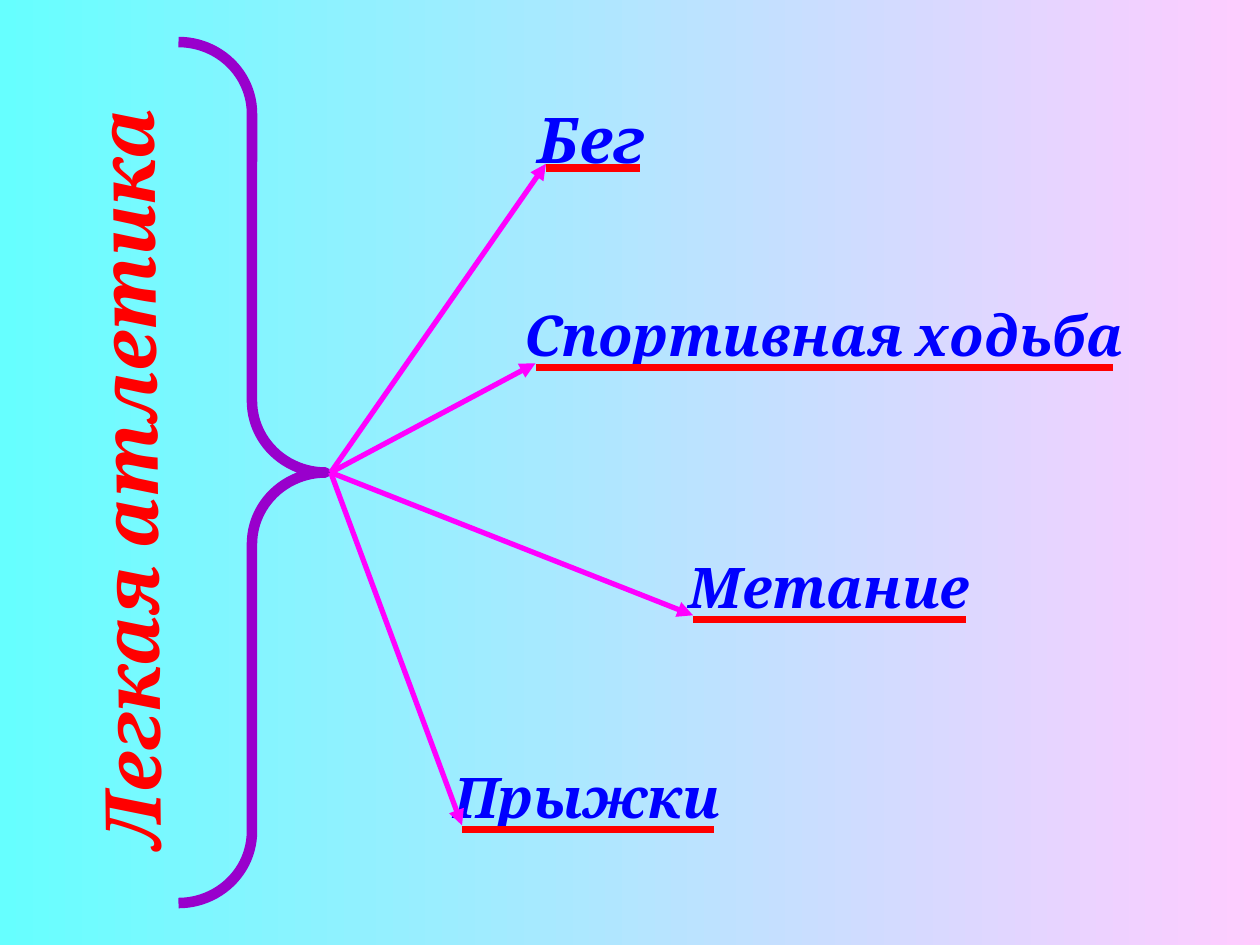
from dataclasses import dataclass

from lxml import etree
from pptx import Presentation
from pptx.dml.color import RGBColor
from pptx.enum.shapes import MSO_CONNECTOR, MSO_SHAPE
from pptx.enum.text import MSO_AUTO_SIZE, PP_ALIGN
from pptx.oxml.ns import qn
from pptx.util import Inches, Pt

STRAIGHT = MSO_CONNECTOR.STRAIGHT
RIGHT_BRACE = MSO_SHAPE.RIGHT_BRACE
GROW = MSO_AUTO_SIZE.SHAPE_TO_FIT_TEXT
LEFT, CENTER = PP_ALIGN.LEFT, PP_ALIGN.CENTER

CELL = Inches(1) / 12
COLUMNS, ROWS = 120, 90


@dataclass(frozen=True)
class Theme:
    font: str = "Cambria"
    bg_left: str = "66FFFF"
    bg_right: str = "FFCCFF"
    title: str = "FF0000"
    branch: str = "0000FF"
    underline: str = "FF0000"
    arrow: str = "FF00FF"
    brace: str = "9900CC"
    title_size: float = 44
    first_size: float = 36
    branch_size: float = 32
    underline_width: float = 4.5
    arrow_width: float = 3
    brace_width: float = 6


THEME = Theme()
HUB = (31.5, 45)
ARROW_GAP = 0.4  # rows between an arrow tip and the underline

# text, size, alignment, box (column, row, columns, rows), underline (from, to, row)
BRANCHES = [
    ("Прыжки", THEME.branch_size, LEFT, (42, 72, 53, 7.5), (44, 68, 79)),
    ("Метание", THEME.branch_size, CENTER, (52, 52, 54, 7.5), (66, 92, 59)),
    ("Спортивная ходьба", THEME.branch_size, CENTER, (45, 28, 67, 7.5), (51, 106, 35)),
    ("Бег", THEME.first_size, LEFT, (50, 9, 44, 8.4), (52, 61, 16)),
]


def grid(*cells):
    return [round(n * CELL) for n in cells]


def rgb(value):
    return RGBColor.from_string(value)


def paint_background(s):
    fill = s.background.fill
    fill.gradient()
    fill.gradient_angle = 0
    for stop, color in zip(fill.gradient_stops, (THEME.bg_left, THEME.bg_right)):
        stop.color.rgb = rgb(color)


def set_line(line, color, width):
    line.color.rgb = rgb(color)
    line.width = Pt(width)


def add_brace(s, box):
    sp = s.shapes.add_shape(RIGHT_BRACE, *grid(*box))
    sp.shadow.inherit = False
    sp.adjustments[0] = 0.488
    sp.adjustments[1] = 0.5
    sp.fill.background()
    set_line(sp.line, THEME.brace, THEME.brace_width)


def add_label(s, text, size, color, box, align=LEFT, rotation=0):
    sp = s.shapes.add_textbox(*grid(*box))
    sp.rotation = rotation
    tf = sp.text_frame
    tf.word_wrap = True
    tf.auto_size = GROW
    p = tf.paragraphs[0]
    p.alignment = align
    r = p.add_run()
    r.text = text
    r.font.name = THEME.font
    r.font.size = Pt(size)
    r.font.bold = r.font.italic = True
    r.font.color.rgb = rgb(color)


def add_line(s, start, end, color, width, arrow=False):
    c = s.shapes.add_connector(STRAIGHT, *grid(*start, *end))
    set_line(c.line, color, width)
    if arrow:
        ln = c.line._get_or_add_ln()
        etree.SubElement(ln, qn("a:tailEnd"), type="triangle")
    etree.SubElement(c._element.spPr, qn("a:effectLst"))


def main():
    prs = Presentation()
    prs.slide_width, prs.slide_height = grid(COLUMNS, ROWS)
    s = prs.slides.add_slide(prs.slide_layouts[6])
    paint_background(s)
    add_brace(s, (17, 4, 14, 82))
    add_label(s, "Легкая атлетика", THEME.title_size, THEME.title,
              (-34.5, 30.5, 93, 10), rotation=269.4)
    for text, size, align, box, _ in BRANCHES:
        add_label(s, text, size, THEME.branch, box, align)
    for *_, (left, right, row) in BRANCHES:
        add_line(s, (left, row), (right, row), THEME.underline, THEME.underline_width)
    for *_, (left, _, row) in BRANCHES:
        add_line(s, HUB, (left, row - ARROW_GAP), THEME.arrow, THEME.arrow_width, arrow=True)
    prs.save("out.pptx")


if __name__ == "__main__":
    main()
